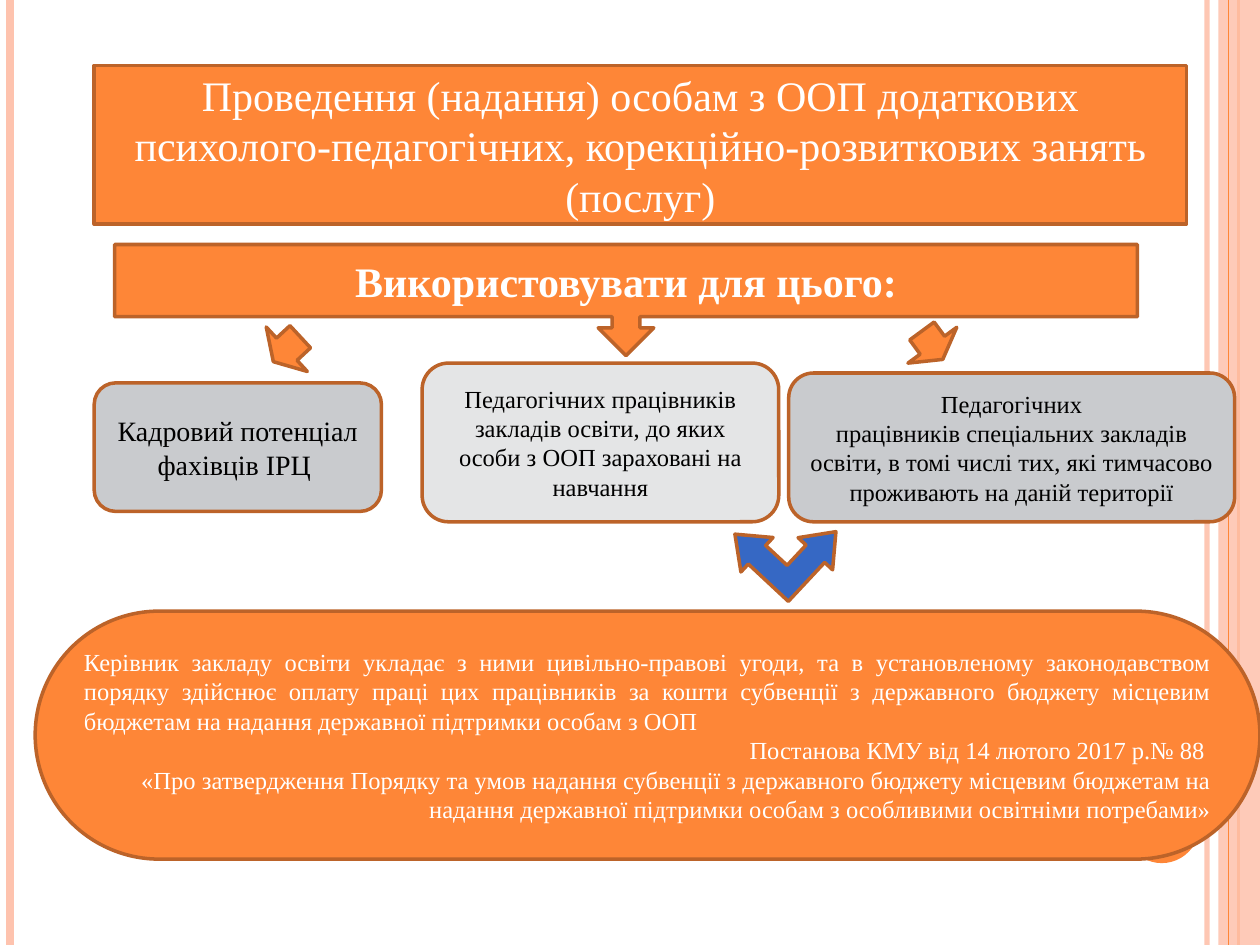
"""Builds a slide on who may give additional classes to people with special educational needs."""
from dataclasses import dataclass

from lxml import etree
from pptx import Presentation
from pptx import util as u
from pptx.dml.color import RGBColor
from pptx.enum import shapes, text
from pptx.oxml.ns import qn

ORANGE, BROWN, PEACH, BLUE = "FE8637", "BC6329", "FEC3AE", "3668C4"
GREY, LIGHT_GREY, WHITE, BLACK = "C9CBCE", "E4E5E6", "FFFFFF", "000000"
FONT = "Times New Roman"
WIDTH, HEIGHT = 25.4, 19.05
KIND, ALIGN = shapes.MSO_SHAPE, text.PP_ALIGN


@dataclass
class Stripe:
    x: float
    weight: float
    color: str
    opacity: int = 100


@dataclass
class Block:
    kind: KIND
    box: tuple[float, float, float, float]
    fill: str = ORANGE
    outline: str | None = BROWN
    rotation: float = 0
    adjustments: tuple[float, ...] = ()
    opacity: int = 100


@dataclass
class Source:
    block: Block
    wording: str
    size: int


OUTER_STRIPES = [Stripe(24.33, 3, PEACH, 93), Stripe(0.2, 4.5, PEACH), Stripe(24.97, 1.5, ORANGE)]
INNER_STRIPE = Stripe(24.77, 0.75, ORANGE)
BAND = Block(KIND.RECTANGLE, (24.56, 0, 0.84, HEIGHT), PEACH, None, opacity=87)
DISC = Block(KIND.OVAL, (22.66, 15.88, 1.52, 1.52), outline=None)
CALLOUT = Block(KIND.DOWN_ARROW_CALLOUT, (2.31, 4.93, 20.62, 2.24))
SIDE_ARROWS = [
    Block(KIND.RIGHT_ARROW, (5.41, 6.43, 0.74, 1.22), rotation=137.2),
    Block(KIND.RIGHT_ARROW, (18.44, 6.35, 0.71, 1.22), rotation=53.7),
]
SOURCES = [
    Source(Block(KIND.ROUNDED_RECTANGLE, (1.9, 7.72, 5.79, 2.59), GREY),
           "Кадровий потенціал фахівців ІРЦ ", 16),
    Source(Block(KIND.ROUNDED_RECTANGLE, (8.51, 7.32, 7.19, 3.2), LIGHT_GREY),
           "Педагогічних працівників\nзакладів освіти, до яких особи з ООП зараховані на навчання", 14),
    Source(Block(KIND.ROUNDED_RECTANGLE, (15.9, 7.52, 8.99, 3), GREY),
           "Педагогічних\nпрацівників спеціальних закладів освіти, в томі числі тих, "
           "які тимчасово\nпроживають на даній території", 14),
]
FORK = Block(KIND.LEFT_UP_ARROW, (14.88, 10.13, 1.93, 1.9), BLUE, rotation=43,
             adjustments=(0.27, 0.25, 0.32))
PAYMENT = Block(KIND.ROUNDED_RECTANGLE, (0.71, 12.32, 24.69, 5), adjustments=(0.5,))
HEADING = ("Проведення (надання) особам з ООП додаткових психолого-педагогічних, "
           "корекційно-розвиткових занять (послуг)")
PAYMENT_RULE = ("Керівник закладу освіти укладає з ними цивільно-правові угоди, та в установленому "
                "законодавством порядку здійснює оплату праці цих працівників за кошти субвенції "
                "з державного бюджету місцевим бюджетам на надання державної підтримки особам з ООП")
DECREE = "Постанова КМУ від 14 лютого 2017 р.№ 88 "
DECREE_NAME = ("«Про затвердження Порядку та умов надання субвенції з державного бюджету місцевим "
               "бюджетам на надання державної підтримки особам з особливими освітніми потребами»")


def paint(fill, color: str, opacity: int = 100) -> None:
    fill.solid()
    fill.fore_color.rgb = RGBColor.from_string(color)
    if opacity < 100:
        srgb = fill._xPr.find(f".//{qn('a:srgbClr')}")
        etree.SubElement(srgb, qn("a:alpha"), val=str(opacity * 1000))


def style(shape, fill: str, outline: str | None, opacity: int = 100) -> None:
    paint(shape.fill, fill, opacity)
    if outline:
        paint(shape.line.fill, outline)
        shape.line.width = u.Pt(2)
    else:
        shape.line.fill.background()


def place(shape, box: tuple[float, float, float, float]) -> None:
    shape.left, shape.top, shape.width, shape.height = map(u.Cm, box)


def write(paragraph, wording: str, *, size: int = 14, color: str = WHITE,
          bold: bool = False, align: ALIGN = ALIGN.CENTER) -> None:
    paragraph.text = wording
    paragraph.alignment = align
    for run in paragraph.runs:
        run.font.name, run.font.size, run.font.bold = FONT, u.Pt(size), bold
        paint(run.font.fill, color)
    for line_break in paragraph._p.findall(qn("a:br")):
        etree.SubElement(line_break, qn("a:rPr"), sz=str(size * 100))


def draw_block(slide, block: Block):
    shape = slide.shapes.add_shape(block.kind, *map(u.Cm, block.box))
    shape.shadow.inherit = False
    shape.rotation = block.rotation
    for index, value in enumerate(block.adjustments):
        shape.adjustments[index] = value
    style(shape, block.fill, block.outline, block.opacity)
    frame = shape.text_frame
    frame.word_wrap = True
    frame.vertical_anchor = text.MSO_ANCHOR.MIDDLE
    return frame


def draw_stripe(slide, stripe: Stripe) -> None:
    line = slide.shapes.add_connector(shapes.MSO_CONNECTOR.STRAIGHT, u.Cm(stripe.x), 0,
                                      u.Cm(stripe.x), u.Cm(HEIGHT))
    paint(line.line.fill, stripe.color, stripe.opacity)
    line.line.width = u.Pt(stripe.weight)
    etree.SubElement(line._element.spPr, qn("a:effectLst"))


def draw_heading(slide) -> None:
    title = slide.shapes.title
    place(title, (1.9, 1.32, 22.02, 3.2))
    style(title, ORANGE, BROWN)
    frame = title.text_frame
    frame.word_wrap = True
    frame.auto_size = text.MSO_AUTO_SIZE.NONE
    frame.vertical_anchor = text.MSO_ANCHOR.MIDDLE
    write(frame.paragraphs[0], HEADING, size=24)


def main() -> None:
    deck = Presentation()
    deck.slide_width, deck.slide_height = u.Cm(WIDTH), u.Cm(HEIGHT)
    slide = deck.slides.add_slide(deck.slide_layouts.get_by_name("Title Only"))

    for stripe in OUTER_STRIPES:
        draw_stripe(slide, stripe)
    draw_block(slide, BAND)
    draw_stripe(slide, INNER_STRIPE)
    draw_block(slide, DISC)

    draw_heading(slide)
    callout = draw_block(slide, CALLOUT)
    write(callout.paragraphs[0], "Використовувати для цього:", size=24, bold=True)
    for arrow in SIDE_ARROWS:
        draw_block(slide, arrow)
    for source in SOURCES:
        frame = draw_block(slide, source.block)
        write(frame.paragraphs[0], source.wording, size=source.size, color=BLACK)
    draw_block(slide, FORK)

    payment = draw_block(slide, PAYMENT)
    write(payment.paragraphs[0], PAYMENT_RULE, align=ALIGN.JUSTIFY)
    for wording in (DECREE, DECREE_NAME):
        write(payment.add_paragraph(), wording, align=ALIGN.RIGHT)

    deck.save("out.pptx")


if __name__ == "__main__":
    main()
